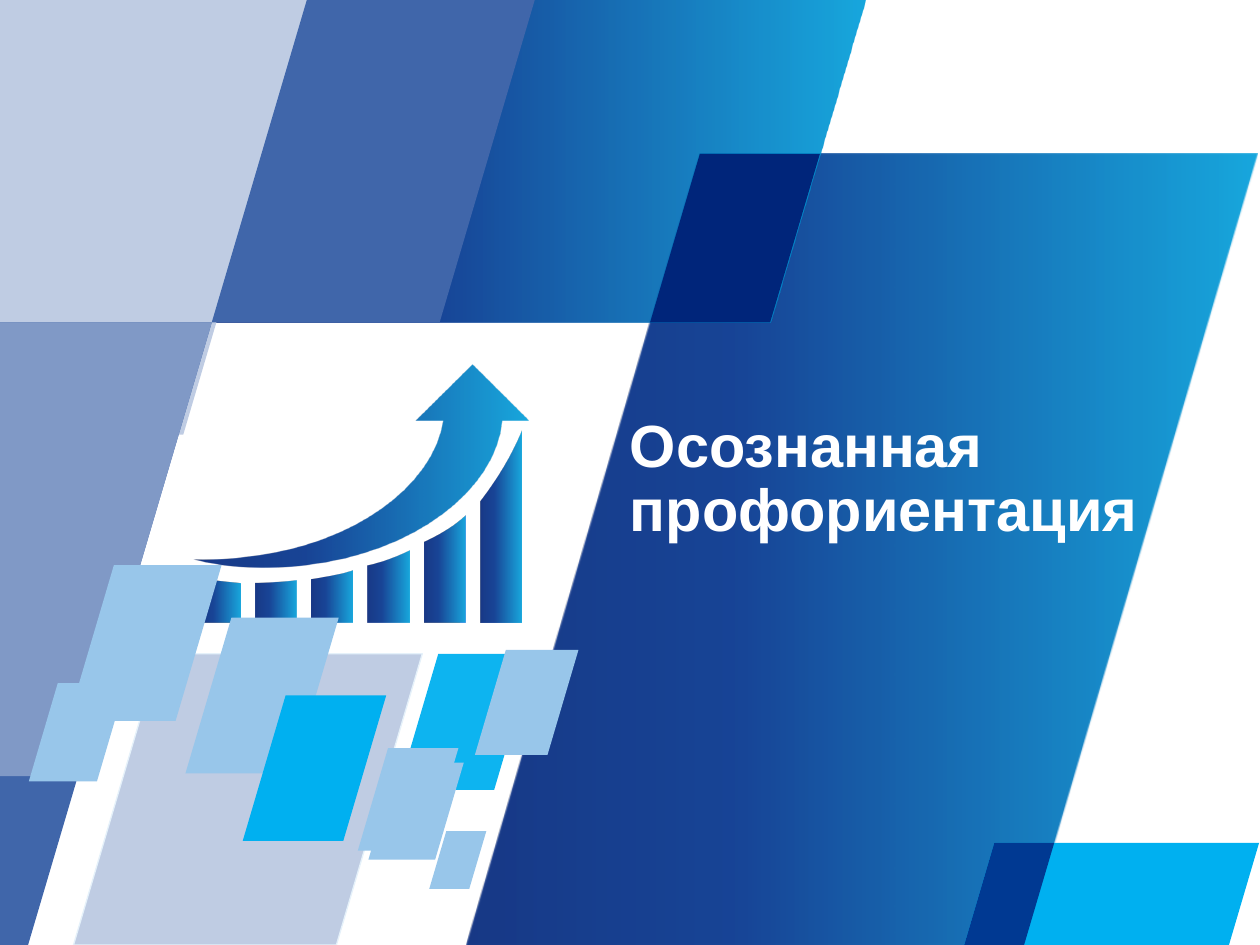
from lxml import etree
from pptx import Presentation
from pptx.dml.color import RGBColor
from pptx.enum.text import MSO_ANCHOR, PP_ALIGN
from pptx.oxml.ns import qn
from pptx.util import Pt

TOP, LEFT = MSO_ANCHOR.TOP, PP_ALIGN.LEFT
SLANT = 0.295  # sideways run of every slanted edge per unit of height
STOPS = ((0, "00257A"), (35, "00338D"), (100, "009FDA"))
PALE, MID, DARK, NAVY = "BFCCE3", "8099C6", "4066AA", "00257A"
CYAN, SKY, BLUE, WHITE = "00B0F0", "98C6EA", "00338D", "FFFFFF"

# left, top, width, height, fill (None: gradient), opacity
BANDS = (
    (266.5, 88, 452, 452, None, 90),
    (551, 481.7, 168.5, 58.3, CYAN, 100),
    (42, 373.6, 199.3, 166.4, PALE, 100),
    (121, 0, 373.4, 184.3, None, 90),
    (0, 0, 178, 248.4, PALE, 100),
    (0, 184.3, 121, 355.7, DARK, 100),
    (551, 481.7, 51.4, 58.3, BLUE, 95),
    (371.5, 88, 97, 96.3, NAVY, 100),
    (227.5, 373.6, 77.8, 77.8, CYAN, 95),
    (121, 0, 184.6, 184.3, DARK, 100),
    (0, 184.3, 121, 259.2, MID, 100),
)
TILES = (
    (106, 353, 87.6, 89, SKY, 100),
    (16.5, 390.3, 55.5, 56.2, SKY, 100),
    (245.3, 475, 32.6, 33, SKY, 100),
    (210.5, 435.8, 54.5, 55.5, SKY, 100),
    (204.5, 427.5, 57.5, 58.6, SKY, 100),
    (271.4, 371.4, 59.2, 60, SKY, 100),
    (38.8, 323, 87.8, 89, SKY, 100),
    (138.7, 397.3, 82, 83.2, CYAN, 100),
)
# heights of the curved bar tops above the base line, from right to left
BARS = (
    (22.3, 23, 23.7, 25.2),
    (23.8, 23.1, 22.4, 22.3),
    (29.5, 27.4, 26, 24.5),
    (41, 38, 34.5, 32.4),
    (61.2, 55.5, 50.4, 46),
    (109.4, 95, 81.4, 69.1),
)


def color(code):
    return RGBColor.from_string(code)


def fade(node, alpha):
    etree.SubElement(node, qn("a:alpha"), val=str(alpha * 1000))


def paint(shape, code, alpha):
    """Fill with one colour, or with the blue gradient if code is None."""
    shape.shadow.inherit = False
    shape.line.fill.background()
    fill, props = shape.fill, shape._element.spPr
    if code:
        fill.solid()
        fill.fore_color.rgb = color(code)
        if alpha < 100:
            fade(props.find(".//" + qn("a:srgbClr")), alpha)
        return
    fill.gradient()
    fill.gradient_angle = 0
    stops = props.find(".//" + qn("a:gsLst"))
    for old in list(stops):
        stops.remove(old)
    for pos, hue in STOPS:
        stop = etree.SubElement(stops, qn("a:gs"), pos=str(pos * 1000))
        fade(etree.SubElement(stop, qn("a:srgbClr"), val=hue), alpha)


def outline(slide, points, code=None, alpha=90):
    start, *rest = [(Pt(x), Pt(y)) for x, y in points]
    pen = slide.shapes.build_freeform(*start, scale=1.0)
    pen.add_line_segments(rest, close=True)
    shape = pen.convert_to_shape()
    paint(shape, code, alpha)
    return shape


def curve(a, b, c, d, steps=16):
    """Points along a cubic curve from a to d."""
    points = []
    for i in range(steps + 1):
        t = i / steps
        u = 1 - t
        mix = (u ** 3, 3 * u * u * t, 3 * u * t * t, t ** 3)
        points.append(tuple(sum(m * p[k] for m, p in zip(mix, (a, b, c, d)))
                            for k in (0, 1)))
    return points


def slab(slide, left, top, width, height, code, alpha):
    """Slanted block; one at the slide's left edge stays upright there."""
    run = height * SLANT
    right, base = left + width, top + height
    head = left + run if left else left
    points = [(head, top), (right, top), (right - run, base), (left, base)]
    shape = outline(slide, points, code, alpha)
    if code == PALE and left:
        shape.line.color.rgb = color("E5F1FA")
        shape.line.width = Pt(0.75)


def arrow(slide, left, top):
    def at(*points):
        return [(left + x, top + y) for x, y in points]

    upper = curve(*at((142, 32.2), (136, 70), (90, 103), (32, 109.5)))
    tail = curve(*at((32, 109.5), (20.5, 111), (10, 111.5), (0, 111.2)))
    lower = curve(*at((0, 111.2), (19, 116), (41, 117.5), (64, 114.5)))
    inner = curve(*at((64, 114.5), (125.5, 107.5), (172, 71.5), (175.5, 32.2)))
    head = at((190.8, 32.2), (158.6, 0), (126.2, 32.2))
    outline(slide, head + upper + tail + lower + inner)


def growth(slide, left, top, width, height):
    """Rising bars under a curved arrow."""
    arrow(slide, left, top)
    base, thick = top + height, 23.5
    first = 3
    step = (width - first - thick - 4) / (len(BARS) - 1)
    for i, rises in enumerate(BARS):
        x = left + first + i * step
        edge = [(x + thick * part, base - rise)
                for part, rise in zip((1, 0.75, 0.4, 0), rises)]
        outline(slide, [(x, base), (x + thick, base)] + curve(*edge))


def title(slide, left, top, width, height):
    box = slide.shapes.add_textbox(Pt(left), Pt(top), Pt(width), Pt(height))
    frame = box.text_frame
    look = {"word_wrap": True, "vertical_anchor": TOP, "margin_left": 0,
            "margin_right": 0, "margin_top": 0, "margin_bottom": 0}
    for name, value in look.items():
        setattr(frame, name, value)
    para = frame.paragraphs[0]
    para.alignment, para.line_spacing = LEFT, 0.9
    run = para.add_run()
    run.text = "Осознанная профориентация"
    for name, value in {"name": "Arial", "size": Pt(34), "bold": True}.items():
        setattr(run.font, name, value)
    run.font.color.rgb = color(WHITE)


def main():
    deck = Presentation()
    deck.slide_width, deck.slide_height = Pt(720), Pt(540)
    slide = deck.slides.add_slide(deck.slide_layouts[6])
    for band in BANDS:
        slab(slide, *band)
    growth(slide, 110.9, 208.2, 191, 147.6)
    for tile in TILES:
        slab(slide, *tile)
    title(slide, 360, 237.6, 328.3, 136)
    deck.save("out.pptx")


if __name__ == "__main__":
    main()
